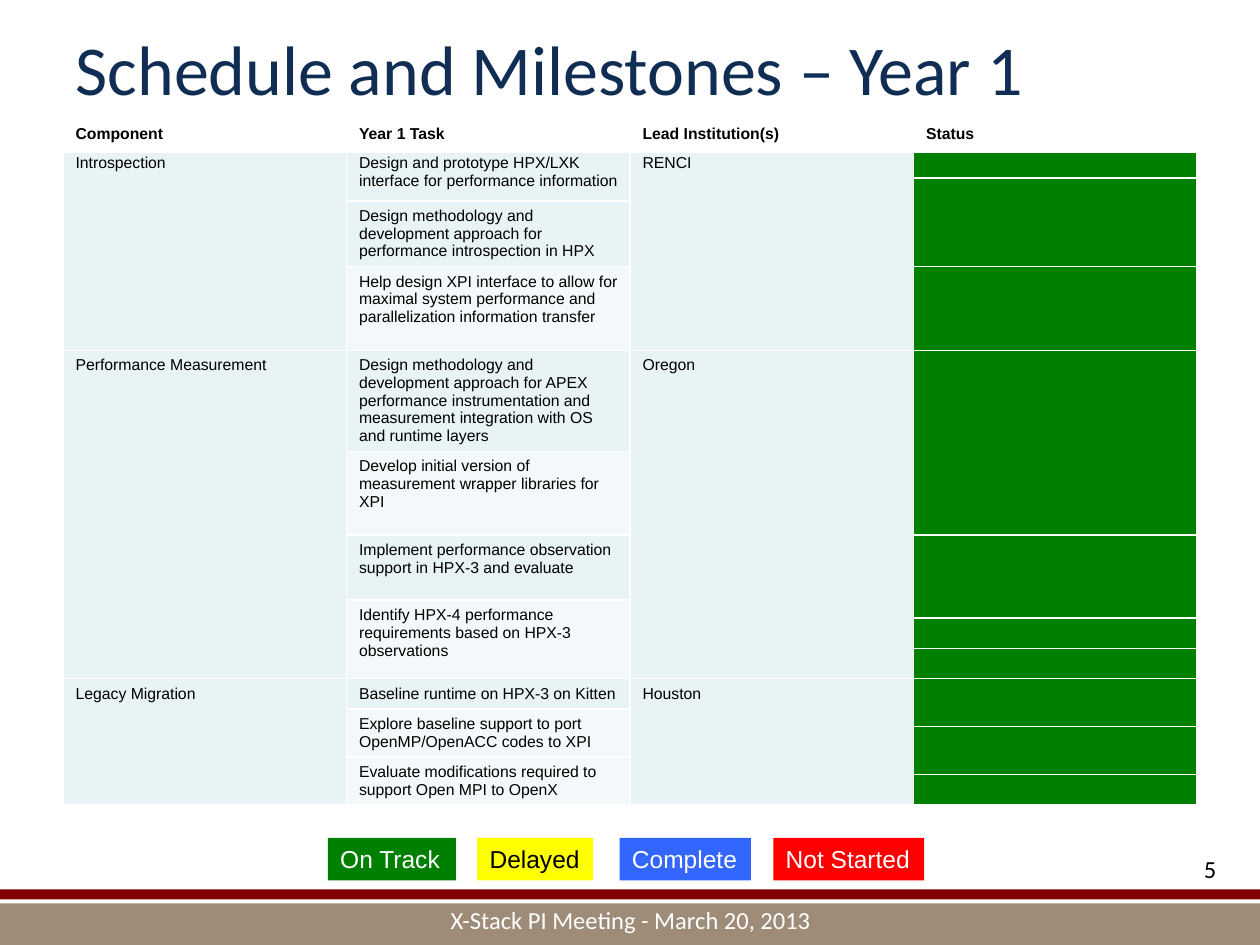
from dataclasses import dataclass

from lxml import etree
from pptx import Presentation
from pptx.dml.color import RGBColor
from pptx.enum.shapes import MSO_SHAPE
from pptx.enum.text import MSO_ANCHOR, PP_ALIGN
from pptx.oxml.ns import qn
from pptx.util import Cm, Pt

RECTANGLE = MSO_SHAPE.RECTANGLE
LEFT, CENTER, RIGHT = PP_ALIGN.LEFT, PP_ALIGN.CENTER, PP_ALIGN.RIGHT
TOP, MIDDLE = MSO_ANCHOR.TOP, MSO_ANCHOR.MIDDLE

COLORS = {
    "navy": "102E54", "black": "000000", "white": "FFFFFF",
    "taupe": "9E8C78", "maroon": "800000",
    "tint": "E7F3F4", "pale": "F3F9FA",
    "green": "008000", "yellow": "FFFF00", "blue": "3366FF", "red": "FF0000",
}
COMPONENT, TASK, LEAD, STATUS = range(4)
HEADINGS = ["Component", "Year 1 Task", "Lead Institution(s)", "Status"]
COLUMN_WIDTH = 5.715
ROW_HEIGHTS = [0.64, 0.56, 0.46, 1.32, 1.69, 2.02, 1.69, 1.31,
               0.36, 0.62, 0.6, 0.6, 0.36, 0.6, 0.36, 0.6]


@dataclass
class Block:
    column: int
    row: int
    rows: int
    color: str
    text: str = ""


@dataclass
class LegendKey:
    text: str
    left: float
    width: float
    fill: str
    color: str = "white"


GROUPS = [
    (1, 4, "Introspection", "RENCI"),
    (5, 6, "Performance Measurement", "Oregon"),
    (11, 5, "Legacy Migration", "Houston"),
]
TASKS = [
    Block(TASK, 1, 2, "tint", "Design and prototype HPX/LXK interface for performance information"),
    Block(TASK, 3, 1, "tint", "Design methodology and development approach for "
          "performance introspection in HPX"),
    Block(TASK, 4, 1, "pale", "Help design XPI interface to allow for maximal system "
          "performance and parallelization information transfer"),
    Block(TASK, 5, 1, "tint", "Design methodology and development approach for APEX performance "
          "instrumentation and measurement integration with OS and runtime layers"),
    Block(TASK, 6, 1, "pale", "Develop initial version of measurement wrapper libraries for XPI"),
    Block(TASK, 7, 1, "tint", "Implement performance observation support in HPX-3 and evaluate"),
    Block(TASK, 8, 3, "pale", "Identify HPX-4 performance requirements based on HPX-3 observations"),
    Block(TASK, 11, 1, "tint", "Baseline runtime on HPX-3 on Kitten"),
    Block(TASK, 12, 2, "pale", "Explore baseline support to port OpenMP/OpenACC codes to XPI"),
    Block(TASK, 14, 2, "pale", "Evaluate modifications required to support Open MPI to OpenX"),
]
STATUS_SPANS = [(1, 1), (2, 2), (4, 1), (5, 2), (7, 2), (9, 1),
                (10, 1), (11, 2), (13, 2), (15, 1)]
LEGEND = [
    LegendKey("On Track", 6.61, 2.58, "green"),
    LegendKey("Delayed", 9.62, 2.34, "yellow", "black"),
    LegendKey("Complete", 12.49, 2.65, "blue"),
    LegendKey("Not Started", 15.59, 3.04, "red"),
]


def rgb(name: str) -> RGBColor:
    return RGBColor.from_string(COLORS[name])


def write(frame, text: str, *, size: float, color: str, font: str = "Arial",
          bold: bool = False, align=LEFT) -> None:
    para = frame.paragraphs[0]
    para.alignment = align
    span = para.add_run()
    span.text = text
    span.font.size = Pt(size)
    span.font.name = font
    span.font.bold = bold
    span.font.color.rgb = rgb(color)


def add_box(page, left: float, top: float, width: float, height: float, fill: str):
    box = page.shapes.add_shape(RECTANGLE, Cm(left), Cm(top), Cm(width), Cm(height))
    box.shadow.inherit = False
    box.fill.solid()
    box.fill.fore_color.rgb = rgb(fill)
    box.line.fill.background()
    return box


def add_label(page, left: float, top: float, width: float, height: float,
              text: str, align) -> None:
    box = page.shapes.add_textbox(Cm(left), Cm(top), Cm(width), Cm(height))
    box.text_frame.word_wrap = True
    write(box.text_frame, text, size=14, color="black" if align == RIGHT else "white",
          font="Calibri", align=align)


def set_borders(cell, bottom: float) -> None:
    properties = cell._tc.get_or_add_tcPr()
    for index, side in enumerate(("lnL", "lnR", "lnT", "lnB")):
        width = bottom if side == "lnB" else 1
        line = etree.Element(qn(f"a:{side}"), w=str(Pt(width)))
        solid = etree.SubElement(line, qn("a:solidFill"))
        etree.SubElement(solid, qn("a:srgbClr"), val=COLORS["white"])
        properties.insert(index, line)


def shrink_empty(cell) -> None:
    para = cell.text_frame.paragraphs[0]
    if not para.runs:
        etree.SubElement(para._p, qn("a:endParaRPr"), sz="100")


def fill_block(table, block: Block) -> None:
    cell = table.cell(block.row, block.column)
    if block.rows > 1:
        cell.merge(table.cell(block.row + block.rows - 1, block.column))
    for row in range(block.row, block.row + block.rows):
        part = table.cell(row, block.column)
        part.fill.solid()
        part.fill.fore_color.rgb = rgb(block.color)
    if block.row == 1:
        cell.margin_top = cell.margin_bottom = Cm(0.08)
    if block.text:
        write(cell.text_frame, block.text, size=9, color="black")


def add_schedule(page) -> None:
    frame = page.shapes.add_table(len(ROW_HEIGHTS), len(HEADINGS), Cm(1.27), Cm(2.39),
                                  Cm(COLUMN_WIDTH * len(HEADINGS)), Cm(sum(ROW_HEIGHTS)))
    table = frame.table
    table.first_row = table.horz_banding = False
    for column in table.columns:
        column.width = Cm(COLUMN_WIDTH)
    for row, height in zip(table.rows, ROW_HEIGHTS):
        row.height = Cm(height)
    for column, heading in enumerate(HEADINGS):
        cell = table.cell(0, column)
        cell.fill.background()
        write(cell.text_frame, heading, size=9, color="black", bold=True)
    blocks = list(TASKS)
    for row, rows, component, lead in GROUPS:
        blocks.append(Block(COMPONENT, row, rows, "tint", component))
        blocks.append(Block(LEAD, row, rows, "tint", lead))
    blocks += [Block(STATUS, row, rows, "green") for row, rows in STATUS_SPANS]
    for block in blocks:
        fill_block(table, block)
    for index, row in enumerate(table.rows):
        for cell in row.cells:
            set_borders(cell, 3 if index == 0 else 1)
            shrink_empty(cell)


def add_title(page, text: str) -> None:
    title = page.shapes.title
    title.left, title.top, title.width, title.height = Cm(1.27), Cm(0), Cm(22.86), Cm(2.74)
    title.text_frame.vertical_anchor = MIDDLE
    write(title.text_frame, text, size=40, color="navy", font="Calibri")


def add_legend(page) -> None:
    for key in LEGEND:
        box = add_box(page, key.left, 16.89, key.width, 0.86, key.fill)
        box.text_frame.word_wrap = False
        box.text_frame.vertical_anchor = TOP
        write(box.text_frame, key.text, size=14, color=key.color)


def main() -> None:
    deck = Presentation()
    deck.slide_width, deck.slide_height = Cm(25.4), Cm(19.05)
    page = deck.slides.add_slide(deck.slide_layouts[5])
    add_box(page, 0, 18.21, 25.4, 0.84, "taupe")
    add_box(page, 0, 17.93, 25.4, 0.2, "maroon")
    add_title(page, "Schedule and Milestones – Year 1")
    add_schedule(page)
    add_legend(page)
    add_label(page, 8.69, 18.11, 8.05, 0.79, "X-Stack PI Meeting - March 20, 2013", CENTER)
    add_label(page, 21.16, 17.09, 3.61, 1.04, "5", RIGHT)
    deck.save("out.pptx")


if __name__ == "__main__":
    main()
